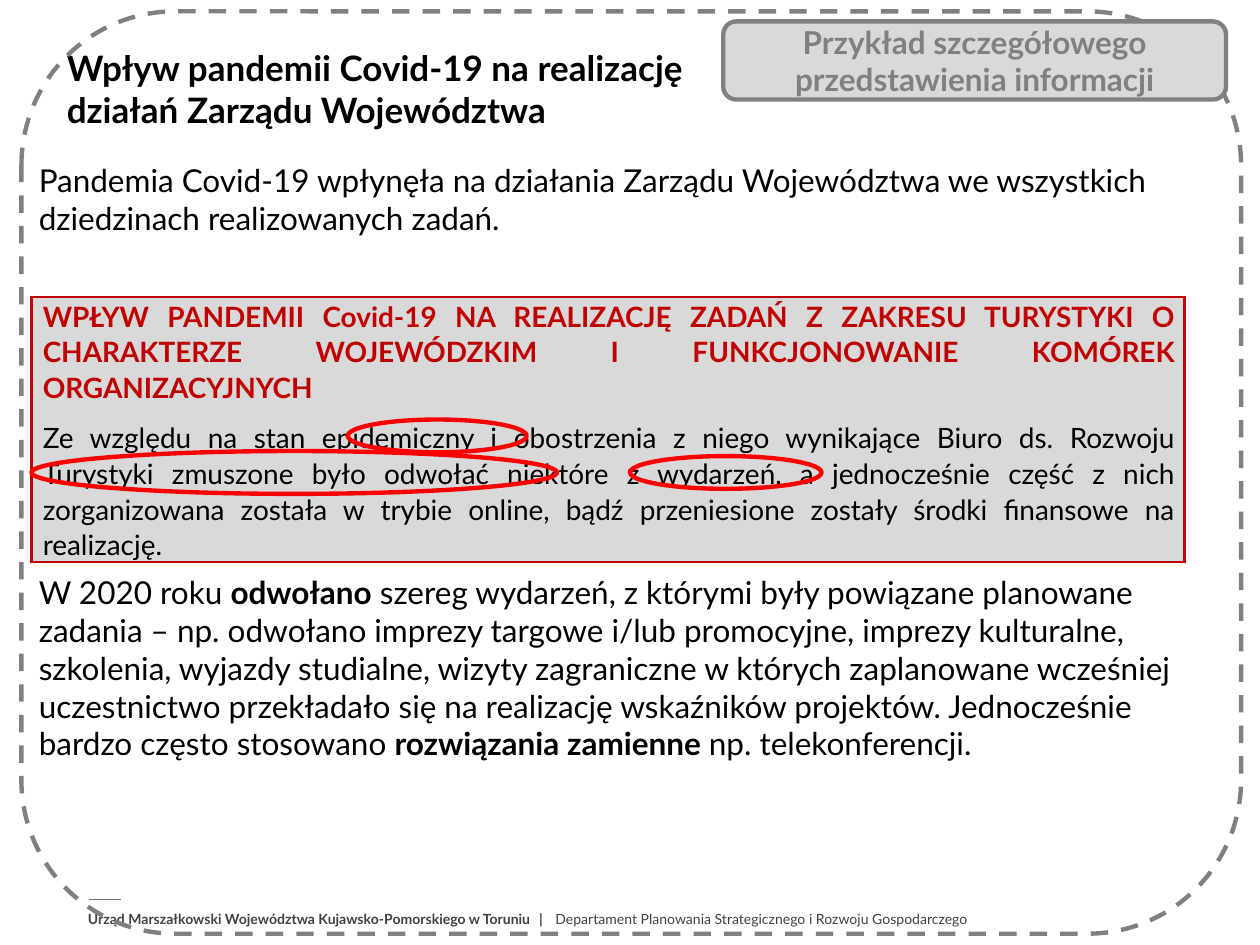
from dataclasses import dataclass

from lxml import etree
from pptx import Presentation
from pptx.dml.color import RGBColor
from pptx.enum.dml import MSO_LINE
from pptx.enum.shapes import MSO_CONNECTOR, MSO_SHAPE
from pptx.enum.text import MSO_ANCHOR, MSO_AUTO_SIZE, PP_ALIGN
from pptx.oxml.ns import qn
from pptx.util import Inches, Pt

LEFT, CENTER, JUSTIFY = PP_ALIGN.LEFT, PP_ALIGN.CENTER, PP_ALIGN.JUSTIFY
TOP, MIDDLE = MSO_ANCHOR.TOP, MSO_ANCHOR.MIDDLE
FIT_SHAPE, NO_FIT = MSO_AUTO_SIZE.SHAPE_TO_FIT_TEXT, MSO_AUTO_SIZE.NONE
ELLIPSE, ROUNDED = MSO_SHAPE.OVAL, MSO_SHAPE.ROUNDED_RECTANGLE
STRAIGHT, DASH = MSO_CONNECTOR.STRAIGHT, MSO_LINE.DASH


@dataclass(frozen=True)
class Theme:
    font: str = "Lato"
    ink: str = "000000"
    accent: str = "C00000"
    marker: str = "FF0000"
    panel: str = "D9D9D9"
    frame: str = "808080"
    footer: str = "414141"
    rule: str = "6E6E6E"
    title_size: float = 20
    body_size: float = 18
    quote_size: float = 16
    footer_size: float = 8
    outline: float = 2.5
    border: float = 1.5
    hairline: float = 0.5


def color(value):
    return RGBColor.from_string(value)


class SlideBuilder:
    def __init__(self, slide, theme):
        self.slide = slide
        self.theme = theme

    def add_runs(self, paragraph, runs, size, ink, align=LEFT):
        paragraph.alignment = align
        for text, bold in runs:
            run = paragraph.add_run()
            run.text = text
            run.font.name = self.theme.font
            run.font.size = Pt(size)
            run.font.bold = bold
            run.font.color.rgb = color(ink)

    def title(self, box, lines):
        heading = self.slide.shapes.title
        heading.left, heading.top, heading.width, heading.height = map(Inches, box)
        frame = heading.text_frame
        frame.auto_size = NO_FIT
        frame.vertical_anchor = TOP
        paragraph = frame.paragraphs[0]
        for index, line in enumerate(lines):
            if index:
                paragraph.add_line_break()
            self.add_runs(paragraph, [(line, True)], self.theme.title_size, self.theme.ink)

    def text(self, box, runs, size, ink, fit=FIT_SHAPE, tabs=()):
        frame = self.slide.shapes.add_textbox(*map(Inches, box)).text_frame
        frame.word_wrap = True
        frame.auto_size = fit
        paragraph = frame.paragraphs[0]
        if tabs:
            stops = etree.SubElement(paragraph._p.get_or_add_pPr(), qn("a:tabLst"))
            for position in tabs:
                etree.SubElement(stops, qn("a:tab"), pos=str(Inches(position)), algn="l")
        self.add_runs(paragraph, runs, size, ink)

    def outline(self, kind, box, line, fill=None, dash=None):
        shape = self.slide.shapes.add_shape(kind, *map(Inches, box))
        shape.shadow.inherit = False
        if fill:
            shape.fill.solid()
            shape.fill.fore_color.rgb = color(fill)
        else:
            shape.fill.background()
        shape.line.color.rgb = color(line)
        shape.line.width = Pt(self.theme.outline)
        if dash:
            shape.line.dash_style = dash
        return shape

    def badge(self, box, text):
        theme = self.theme
        frame = self.outline(ROUNDED, box, theme.frame, theme.panel).text_frame
        frame.word_wrap = True
        frame.vertical_anchor = MIDDLE
        self.add_runs(frame.paragraphs[0], [(text, True)], theme.body_size, theme.frame, CENTER)

    def rule(self, left, top, right):
        line = self.slide.shapes.add_connector(
            STRAIGHT, Inches(left), Inches(top), Inches(right), Inches(top))
        line.line.color.rgb = color(self.theme.rule)
        line.line.width = Pt(self.theme.hairline)
        etree.SubElement(line._element.spPr, qn("a:effectLst"))

    def quote_table(self, box, passages):
        table = self.slide.shapes.add_table(1, 1, *map(Inches, box)).table
        table.first_row = table.horz_banding = False
        cell = table.cell(0, 0)
        cell.margin_left = cell.margin_right = Inches(0.07)
        cell.margin_top = cell.margin_bottom = 0
        cell.fill.solid()
        cell.fill.fore_color.rgb = color(self.theme.panel)
        properties = cell._tc.get_or_add_tcPr()
        for index, side in enumerate(("lnL", "lnR", "lnT", "lnB")):
            border = etree.Element(qn(f"a:{side}"), w=str(Pt(self.theme.border)))
            fill = etree.SubElement(border, qn("a:solidFill"))
            etree.SubElement(fill, qn("a:srgbClr"), val=self.theme.accent)
            properties.insert(index, border)
        frame = cell.text_frame
        for index, (text, bold, ink) in enumerate(passages):
            paragraph = frame.add_paragraph() if index else frame.paragraphs[0]
            paragraph._p.get_or_add_pPr().set("marL", str(Inches(0.02)))
            paragraph.line_spacing = 1.07
            paragraph.space_after = Pt(8)
            self.add_runs(paragraph, [(text, bold)], self.theme.quote_size, ink, JUSTIFY)


def main():
    theme = Theme()
    presentation = Presentation()
    presentation.slide_width, presentation.slide_height = Inches(10), Inches(7.5)
    builder = SlideBuilder(presentation.slides.add_slide(presentation.slide_layouts[5]), theme)

    builder.rule(0.71, 7.14, 0.96)
    builder.text((0.6, 7.18, 8.04, 0.22), [
        ("Urząd Marszałkowski Województwa Kujawsko-Pomorskiego w Toruniu\t|\t", True),
        ("Departament Planowania Strategicznego i Rozwoju Gospodarczego", False),
    ], theme.footer_size, theme.footer, NO_FIT, tabs=(3.58, 3.71))

    builder.quote_table((0.25, 2.36, 9.15, 1.86), [
        ("WPŁYW PANDEMII Covid-19 NA REALIZACJĘ ZADAŃ Z ZAKRESU TURYSTYKI O "
         "CHARAKTERZE WOJEWÓDZKIM I FUNKCJONOWANIE KOMÓREK ORGANIZACYJNYCH",
         True, theme.accent),
        ("Ze względu na stan epidemiczny i obostrzenia z niego wynikające Biuro ds. "
         "Rozwoju Turystyki zmuszone było odwołać niektóre z wydarzeń, a jednocześnie "
         "część z nich zorganizowana została w trybie online, bądź przeniesione zostały "
         "środki finansowe na realizację.", False, theme.ink),
    ])

    builder.title((0.43, 0.32, 5.44, 0.77), [
        "Wpływ pandemii Covid-19 na realizację", "działań Zarządu Województwa"])
    builder.text((0.21, 1.23, 9.24, 0.71), [
        ("Pandemia Covid-19 wpłynęła na działania Zarządu Województwa we wszystkich "
         "dziedzinach realizowanych zadań.", False),
    ], theme.body_size, theme.ink)

    for highlight in ((2.76, 3.33, 1.42, 0.26), (0.25, 3.58, 4.17, 0.34), (5, 3.62, 1.52, 0.26)):
        builder.outline(ELLIPSE, highlight, theme.marker)

    builder.text((0.21, 4.5, 9.24, 1.62), [
        ("W 2020 roku ", False),
        ("odwołano", True),
        (" szereg wydarzeń, z którymi były powiązane planowane zadania – np. odwołano "
         "imprezy targowe i/lub promocyjne, imprezy kulturalne, szkolenia, wyjazdy "
         "studialne, wizyty zagraniczne w których zaplanowane wcześniej uczestnictwo "
         "przekładało się na realizację wskaźników projektów. Jednocześnie bardzo często "
         "stosowano ", False),
        ("rozwiązania zamienne ", True),
        ("np. telekonferencji.", False),
    ], theme.body_size, theme.ink)

    builder.outline(ROUNDED, (0.17, 0.09, 9.68, 7.32), theme.frame, dash=DASH)
    builder.badge((5.74, 0.17, 3.99, 0.62), "Przykład szczegółowego przedstawienia informacji")

    presentation.save("out.pptx")


if __name__ == "__main__":
    main()
